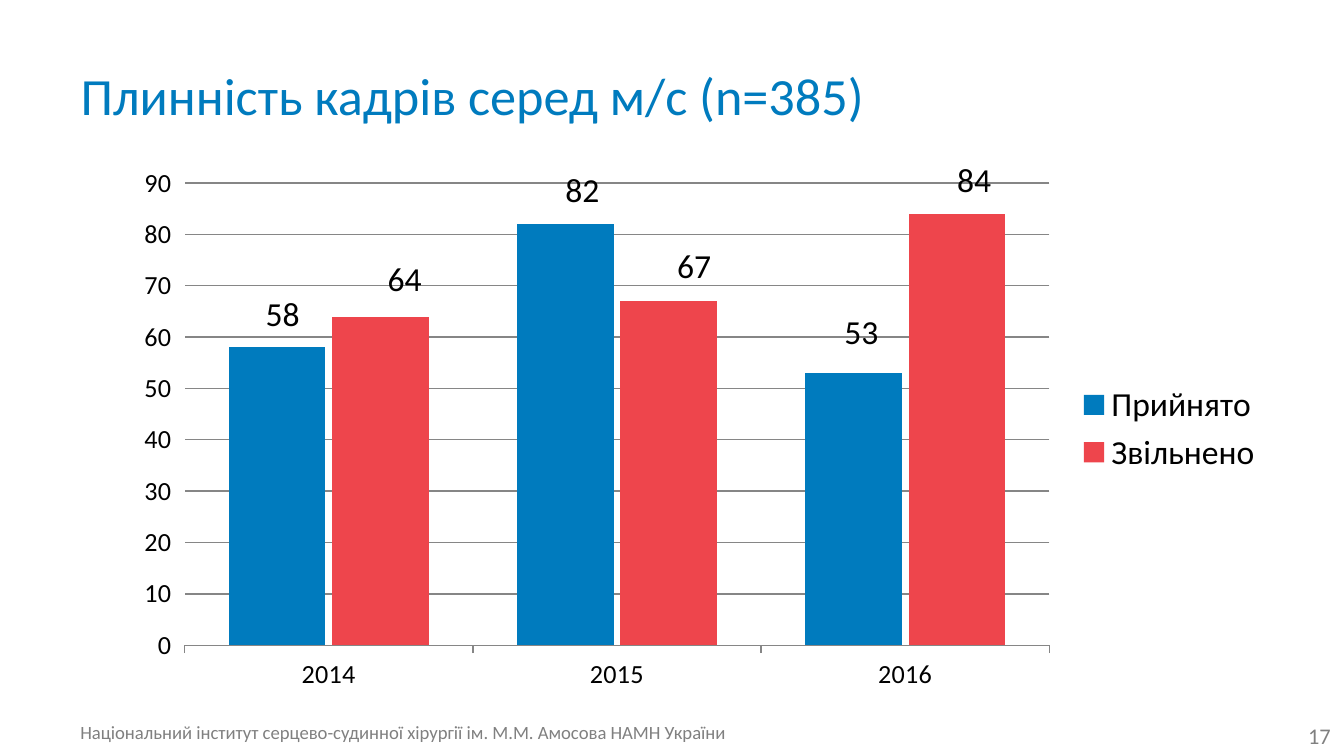
from dataclasses import dataclass

from lxml import etree
from pptx import Presentation
from pptx.chart.data import CategoryChartData
from pptx.dml.color import RGBColor
from pptx.enum.chart import XL_CHART_TYPE, XL_LABEL_POSITION, XL_LEGEND_POSITION, XL_TICK_MARK
from pptx.enum.text import MSO_ANCHOR, PP_ALIGN
from pptx.oxml.ns import qn
from pptx.util import Inches, Pt

COLUMNS = XL_CHART_TYPE.COLUMN_CLUSTERED
OUTSIDE_END = XL_LABEL_POSITION.OUTSIDE_END
LEGEND_RIGHT = XL_LEGEND_POSITION.RIGHT
TICK_OUT, TICK_NONE = XL_TICK_MARK.OUTSIDE, XL_TICK_MARK.NONE
LEFT, RIGHT = PP_ALIGN.LEFT, PP_ALIGN.RIGHT
TOP, MIDDLE = MSO_ANCHOR.TOP, MSO_ANCHOR.MIDDLE

FONT = "Calibri"
BLUE = RGBColor(0x00, 0x7B, 0xBE)
RED = RGBColor(0xEE, 0x45, 0x4C)
GRAY = RGBColor(0x80, 0x80, 0x80)
AXIS_GRAY = RGBColor(0x86, 0x86, 0x86)
BLACK = RGBColor(0, 0, 0)

# A 16:9 slide
SLIDE_W = Inches(10)
SLIDE_H = SLIDE_W * 9 // 16
YEARS = ["2014", "2015", "2016"]


@dataclass
class Box:
    """A rectangle in shares of the slide's width and height."""
    x: float
    y: float
    w: float
    h: float

    def emu(self) -> tuple[int, int, int, int]:
        return (int(self.x * SLIDE_W), int(self.y * SLIDE_H),
                int(self.w * SLIDE_W), int(self.h * SLIDE_H))


@dataclass
class StaffSeries:
    name: str
    values: list[int]
    color: RGBColor
    label_shifts: list[tuple[float, float]]  # shares of the chart's size


@dataclass
class Label:
    text: str
    box: Box
    size: int
    color: RGBColor
    align: PP_ALIGN
    anchor: MSO_ANCHOR


SERIES = [
    StaffSeries("Прийнято", [58, 82, 53], BLUE,
                [(0.005, -0.013), (0.015, -0.015), (0.007, -0.028)]),
    StaffSeries("Звільнено", [64, 67, 84], RED,
                [(0.021, -0.02), (0.022, -0.017), (0.015, -0.014)]),
]
TITLE = Label("Плинність кадрів серед м/с (n=385)",
              Box(0.05, 0.041, 0.825, 0.167), 28, BLUE, LEFT, MIDDLE)
FOOTERS = [
    Label("Національний інститут серцево-судинної хірургії ім. М.М. Амосова НАМН України",
          Box(0.05, 0.945, 0.533, 0.048), 10, GRAY, LEFT, TOP),
    Label("17", Box(0.767, 0.946, 0.233, 0.053), 12, GRAY, RIGHT, MIDDLE),
]
CHART_BOX = Box(0.091, 0.206, 0.859, 0.722)


def set_label(sp, label: Label) -> None:
    sp.left, sp.top, sp.width, sp.height = label.box.emu()
    tf = sp.text_frame
    tf.text = label.text
    tf.word_wrap = True
    tf.vertical_anchor = label.anchor
    p = tf.paragraphs[0]
    p.alignment = label.align
    set_font(p.runs[0].font, label.size, label.color)


def set_font(font, size: int, color: RGBColor = BLACK) -> None:
    font.name, font.size, font.bold = FONT, Pt(size), False
    font.color.rgb = color


def manual_layout(**settings: object) -> etree._Element:
    layout = etree.Element(qn("c:layout"))
    manual = etree.SubElement(layout, qn("c:manualLayout"))
    for tag, value in settings.items():
        etree.SubElement(manual, qn(f"c:{tag}")).set("val", str(value))
    return layout


def style_axis(axis) -> None:
    set_font(axis.tick_labels.font, 14)
    axis.major_tick_mark, axis.minor_tick_mark = TICK_OUT, TICK_NONE
    axis.format.line.color.rgb = AXIS_GRAY


def style_series(series, staff: StaffSeries) -> None:
    series.format.fill.solid()
    series.format.fill.fore_color.rgb = staff.color
    series.invert_if_negative = False
    labels = series.data_labels
    labels.show_value = True
    labels.position = OUTSIDE_END
    set_font(labels.font, 18)
    for i in range(len(staff.values)):
        point_label = series.points[i].data_label
        set_font(point_label.font, 18)
        point_label.position = OUTSIDE_END
    # Each value label is nudged from its usual place, without leader lines
    nodes = labels._element.findall(qn("c:dLbl"))
    for node, (dx, dy) in zip(nodes, staff.label_shifts):
        node.insert(1, manual_layout(x=dx, y=dy))
    for leader in labels._element.findall(qn("c:showLeaderLines")):
        leader.set("val", "0")


def add_staff_chart(slide) -> None:
    data = CategoryChartData()
    data.categories = YEARS
    for staff in SERIES:
        data.add_series(staff.name, staff.values)
    chart = slide.shapes.add_chart(COLUMNS, *CHART_BOX.emu(), data).chart
    chart.has_title = False
    set_font(chart.font, 18)

    # Legend
    chart.has_legend = True
    chart.legend.position = LEGEND_RIGHT
    chart.legend.include_in_layout = False
    set_font(chart.legend.font, 18)

    # Axes
    style_axis(chart.category_axis)
    axis = chart.value_axis
    style_axis(axis)
    axis.format.line.fill.background()
    axis.minimum_scale, axis.maximum_scale, axis.major_unit = 0, 90, 10
    axis.has_major_gridlines = True
    grid = axis.major_gridlines.format.line
    grid.color.rgb, grid.width = AXIS_GRAY, Pt(0.75)

    # Columns
    plot = chart.plots[0]
    plot.vary_by_categories = False
    plot.gap_width, plot.overlap = 91, -7
    for series, staff in zip(plot.series, SERIES):
        style_series(series, staff)

    # Plot area
    area = chart._chartSpace.find(f".//{qn('c:plotArea')}")
    for old in area.findall(qn("c:layout")):
        area.remove(old)
    area.insert(0, manual_layout(layoutTarget="inner", xMode="edge", yMode="edge",
                                 x=0.054, y=0.05, w=0.749, h=0.847))


def main() -> None:
    prs = Presentation()
    prs.slide_width, prs.slide_height = SLIDE_W, SLIDE_H
    s = prs.slides.add_slide(prs.slide_layouts[5])
    set_label(s.shapes.title, TITLE)
    for label in FOOTERS:
        set_label(s.shapes.add_textbox(*label.box.emu()), label)
    add_staff_chart(s)
    prs.save("out.pptx")


if __name__ == "__main__":
    main()
